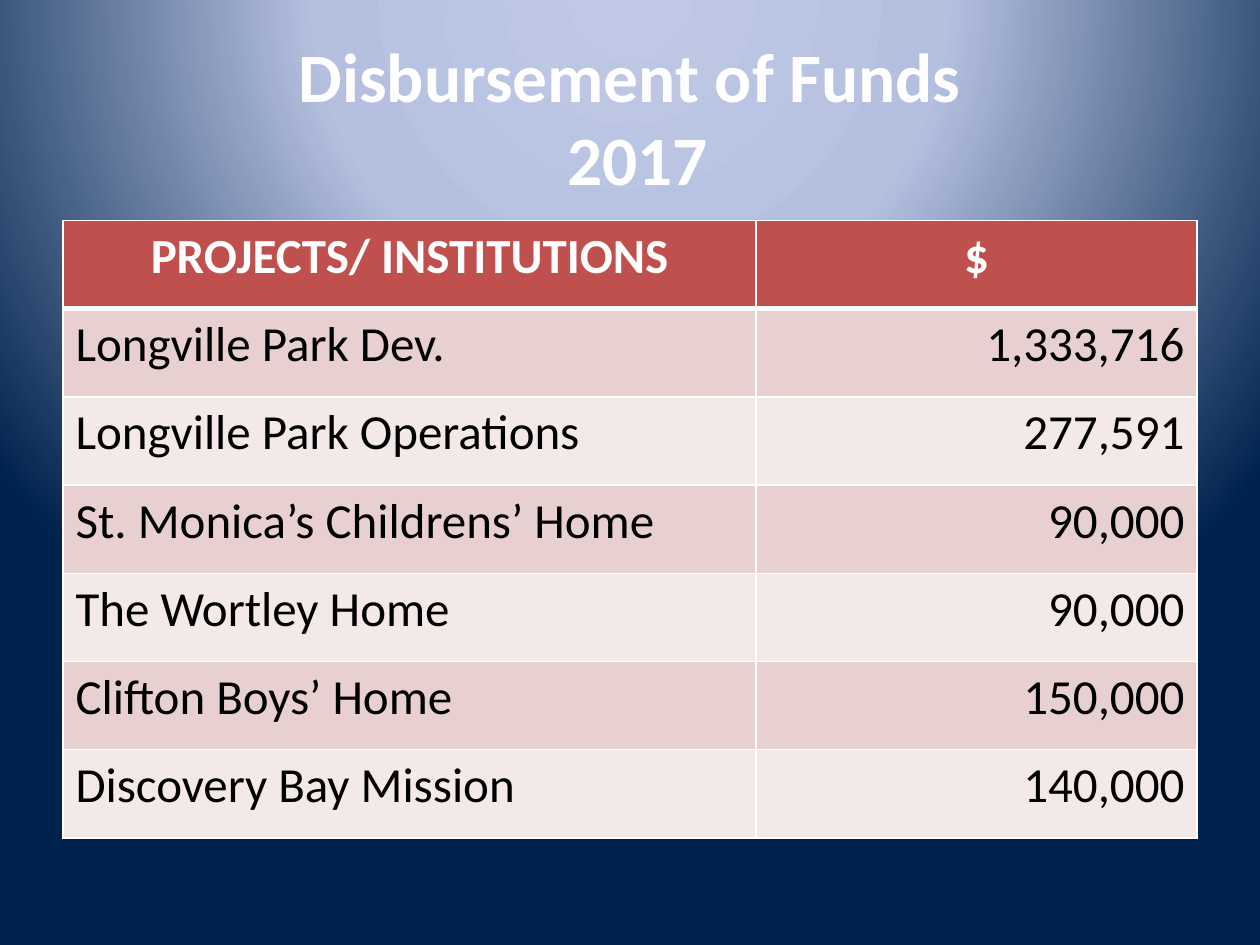
from lxml.etree import SubElement
from pptx import Presentation
from pptx.dml.color import RGBColor
from pptx.enum.text import MSO_ANCHOR, MSO_AUTO_SIZE, PP_ALIGN
from pptx.oxml import parse_xml
from pptx.oxml.ns import nsdecls, qn
from pptx.util import Emu, Pt

SCALE = 9144
FONT = "Calibri"
WHITE, BLACK, RED = "FFFFFF", "000000", "C0504D"
BANDS = ["E8D0D0", "F4E9E9"]
GLOW = [(0, "BFC9E5"), (40, "B5C0E0"), (100, "00234D")]
COLS = [550, 350]
ROW = 70
HEAD = ("PROJECTS/ INSTITUTIONS", "$")
FUNDS = [
    ("Longville Park Dev.", "1,333,716"),
    ("Longville Park Operations", "277,591"),
    ("St. Monica’s Childrens’ Home", "90,000"),
    ("The Wortley Home", "90,000"),
    ("Clifton Boys’ Home", "150,000"),
    ("Discovery Bay Mission", "140,000"),
]


def px(num):
    """Turn px into EMU."""
    return Emu(num * SCALE)


def color(code):
    """Turn a hex string into a colour."""
    return RGBColor.from_string(code)


def style(para, size, code, bold, align):
    """Format a paragraph and its runs."""
    para.alignment = align
    for run in para.runs:
        font = run.font
        font.name, font.size, font.bold = FONT, Pt(size), bold
        font.color.rgb = color(code)


def add_glow(slide):
    """Set the round gradient behind the slide."""
    stops = "".join(
        f'<a:gs pos="{pos * 1000}"><a:srgbClr val="{code}"/></a:gs>'
        for pos, code in GLOW
    )
    back = parse_xml(
        f'<p:bg {nsdecls("p", "a")}><p:bgPr><a:gradFill rotWithShape="1">'
        f'<a:gsLst>{stops}</a:gsLst><a:path path="circle">'
        '<a:fillToRect l="50000" t="-80000" r="50000" b="180000"/>'
        "</a:path></a:gradFill><a:effectLst/></p:bgPr></p:bg>"
    )
    slide.element.cSld.insert(0, back)


def add_title(slide, text):
    """Place and format the title."""
    title = slide.shapes.title
    title.left, title.top, title.width, title.height = map(px, (50, 30, 900, 125))
    frame = title.text_frame
    frame.text = text
    frame.auto_size = MSO_AUTO_SIZE.NONE
    frame.vertical_anchor = MSO_ANCHOR.MIDDLE
    style(frame.paragraphs[0], 39.6, WHITE, True, PP_ALIGN.CENTER)


def add_edge(cell, side, width):
    """Draw one white border of a cell."""
    props = cell._tc.get_or_add_tcPr()
    line = SubElement(props, qn(f"a:{side}"), w=str(Pt(width)))
    fill = SubElement(line, qn("a:solidFill"))
    SubElement(fill, qn("a:srgbClr"), val=WHITE)


def fill_cell(cell, text, back, code, bold, align, top, base):
    """Write, border and fill one cell."""
    cell.text = text
    style(cell.text_frame.paragraphs[0], 28, code, bold, align)
    for side, width in (("lnL", 1), ("lnR", 1), ("lnT", top), ("lnB", base)):
        add_edge(cell, side, width)
    cell.fill.solid()
    cell.fill.fore_color.rgb = color(back)


def add_funds(slide):
    """Add the table of funds."""
    count = len(FUNDS) + 1
    size = map(px, (50, 175, sum(COLS), ROW * count))
    table = slide.shapes.add_table(count, len(COLS), *size).table
    for col, width in zip(table.columns, COLS):
        col.width = px(width)
    for row in table.rows:
        row.height = px(ROW)
    for col, text in enumerate(HEAD):
        fill_cell(table.cell(0, col), text, RED, WHITE, True, PP_ALIGN.CENTER, 1, 3)
    sides = (PP_ALIGN.LEFT, PP_ALIGN.RIGHT)
    for row, fund in enumerate(FUNDS, 1):
        back = BANDS[(row - 1) % 2]
        top = 3 if row == 1 else 1
        for col, text in enumerate(fund):
            fill_cell(table.cell(row, col), text, back, BLACK, False, sides[col], top, 1)


def main():
    """Build and save the slide."""
    deck = Presentation()
    deck.slide_width, deck.slide_height = px(1000), px(750)
    slide = deck.slides.add_slide(deck.slide_layouts[5])
    add_glow(slide)
    add_title(slide, "Disbursement of Funds\v 2017")
    add_funds(slide)
    deck.save("out.pptx")


if __name__ == "__main__":
    main()
